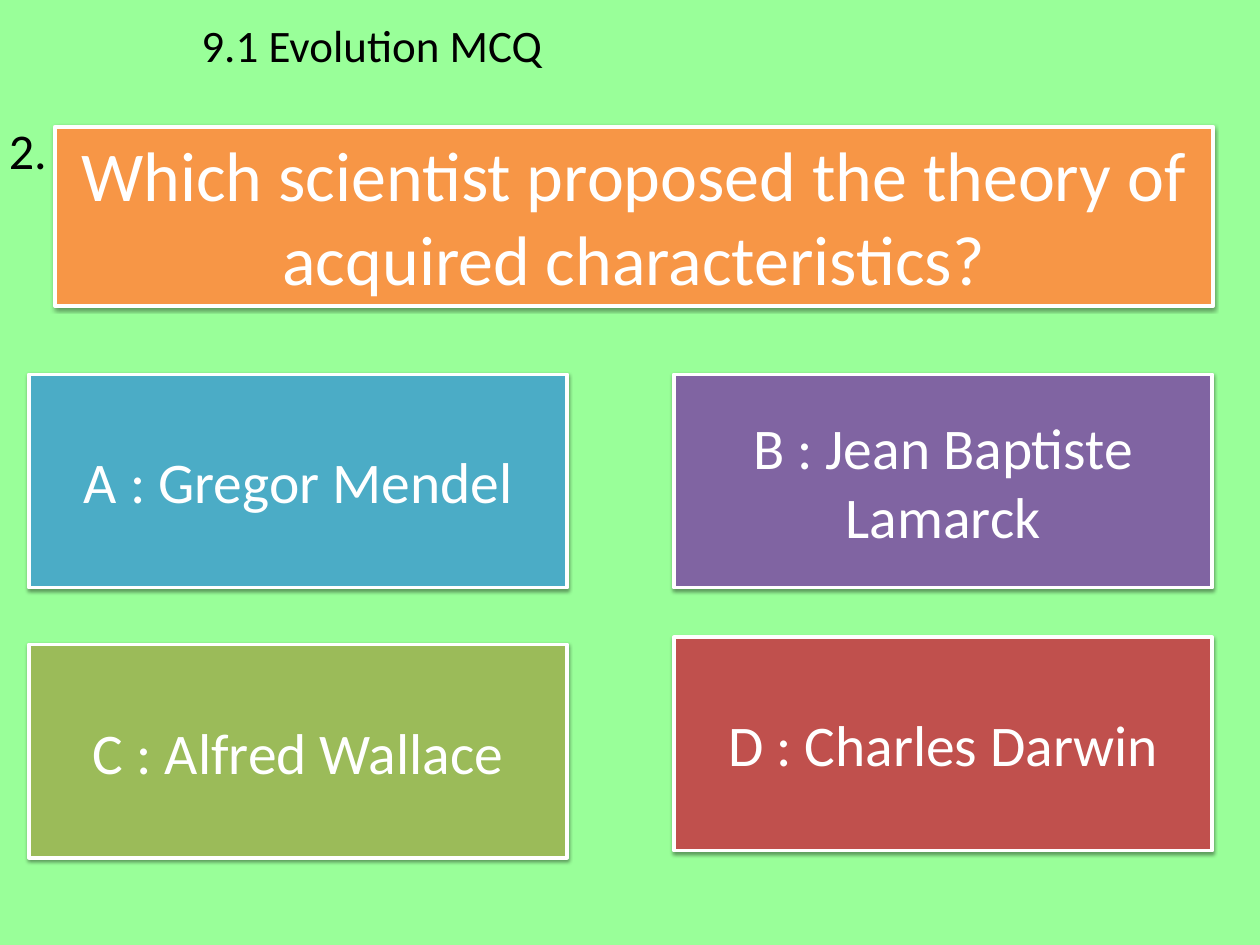
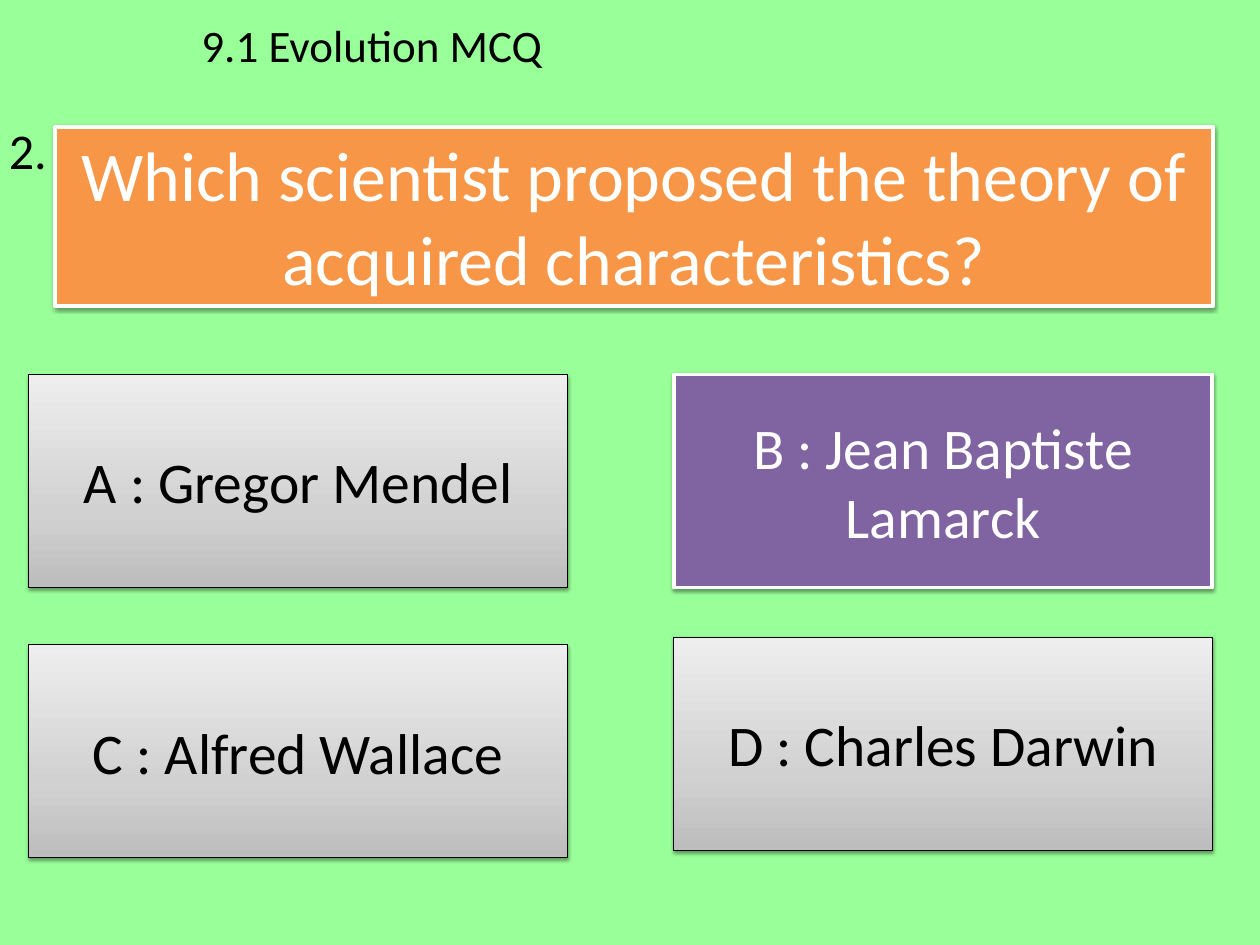
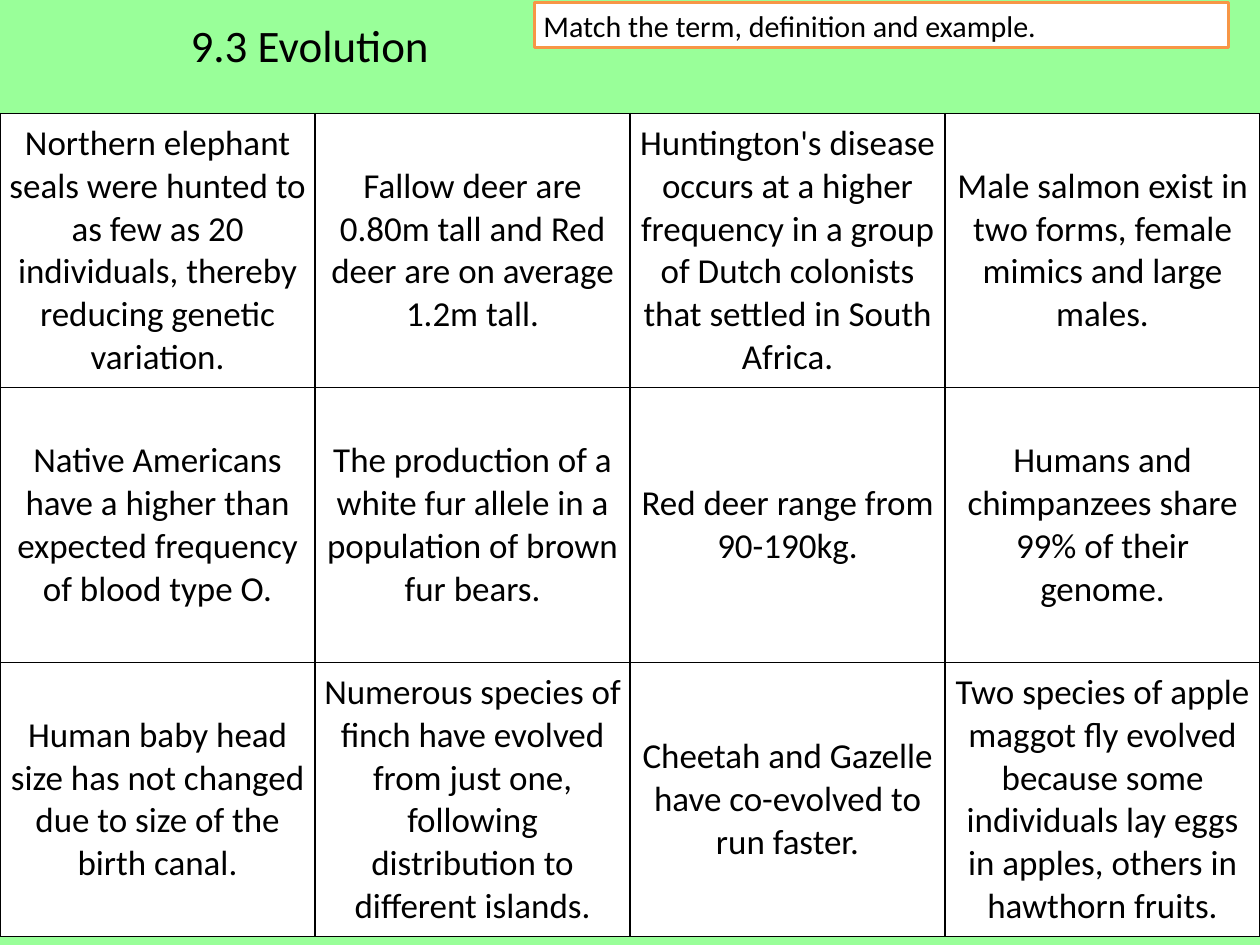
from collections import namedtuple

from lxml.etree import SubElement
from pptx import Presentation
from pptx.dml.color import RGBColor
from pptx.enum.shapes import MSO_SHAPE
from pptx.enum.text import MSO_ANCHOR as Anchor, MSO_AUTO_SIZE as AutoSize, PP_ALIGN as Align
from pptx.oxml import parse_xml
from pptx.oxml.ns import nsdecls, qn
from pptx.util import Inches, Pt

Box = namedtuple("Box", "x y w h")

W, H = 14, 10.5
FONT = "Calibri"
GREEN, ORANGE, WHITE, BLACK = "99FF99", "F79646", "FFFFFF", "000000"
GREYS = [(0, "BDBDBD"), (35, "D1D1D1"), (100, "EEEEEE")]

QUESTION = "Which scientist proposed the theory of acquired characteristics?"
ANSWERS = [
    ("A : Gregor Mendel", "4BACC6"),
    ("B : Jean Baptiste Lamarck", "8064A2"),
    ("C : Alfred Wallace", "9BBB59"),
    ("D : Charles Darwin", "C0504D"),
]
CORRECT = 1
EXAMPLES = [
    ["Northern elephant seals were hunted to as few as 20 individuals, thereby reducing genetic variation.",
     "Fallow deer are 0.80m tall and Red deer are on average 1.2m tall.",
     "Huntington's disease occurs at a higher frequency in a group of Dutch colonists that settled in South Africa.",
     "Male salmon exist in two forms, female mimics and large males."],
    ["Native Americans have a higher than expected frequency of blood type O.",
     "The production of a white fur allele in a population of brown fur bears.",
     "Red deer range from 90-190kg.",
     "Humans and chimpanzees share 99% of their genome."],
    ["Human baby head size has not changed due to size of the birth canal.",
     "Numerous species of finch have evolved from just one, following distribution to different islands.",
     "Cheetah and Gazelle have co-evolved to run faster.",
     "Two species of apple maggot fly evolved because some individuals lay eggs in apples, others in hawthorn fruits."],
]


def rgb(value):
    """Turn a hex string into a colour."""
    return RGBColor.from_string(value)


def inches(box):
    """Turn a box into four lengths."""
    return [Inches(v) for v in box]


def write(tf, text, size, color=BLACK, align=Align.LEFT, anchor=Anchor.TOP):
    """Fill a text frame with one paragraph."""
    tf.word_wrap = True
    tf.vertical_anchor = anchor
    p = tf.paragraphs[0]
    p.text = text
    p.alignment = align
    p.font.name, p.font.size = FONT, Pt(size)
    p.font.color.rgb = rgb(color)


def add_label(slide, box, text, size):
    """Add plain text on the background."""
    tf = slide.shapes.add_textbox(*inches(box)).text_frame
    write(tf, text, size)
    tf.auto_size = AutoSize.SHAPE_TO_FIT_TEXT


def add_panel(slide, box, fill, line, weight):
    """Add a flat outlined rectangle."""
    sp = slide.shapes.add_shape(MSO_SHAPE.RECTANGLE, *inches(box))
    sp.shadow.inherit = False
    sp.fill.solid()
    sp.fill.fore_color.rgb = rgb(fill)
    sp.line.color.rgb = rgb(line)
    sp.line.width = Pt(weight)
    return sp


def add_shadow(sp):
    """Give a panel a soft shadow below it."""
    effects = sp._element.spPr.find(qn("a:effectLst"))
    shadow = SubElement(effects, qn("a:outerShdw"), blurRad=str(Pt(3.1)),
                        dist=str(Pt(1.6)), dir="5400000", rotWithShape="0")
    color = SubElement(shadow, qn("a:srgbClr"), val=BLACK)
    SubElement(color, qn("a:alpha"), val="38000")


def fade_grey(sp):
    """Replace a solid fill by a grey gradient, darkest at the bottom."""
    stops = "".join(f'<a:gs pos="{pos * 1000}"><a:srgbClr val="{c}"/></a:gs>' for pos, c in GREYS)
    grad = parse_xml(f'<a:gradFill {nsdecls("a")} rotWithShape="1"><a:gsLst>{stops}</a:gsLst>'
                     '<a:lin ang="16200000" scaled="0"/></a:gradFill>')
    spPr = sp._element.spPr
    spPr.replace(spPr.find(qn("a:solidFill")), grad)


def add_answer(slide, box, text, fill, muted):
    """Add one answer card, greyed out when muted."""
    line, weight, color = (BLACK, 0.75, BLACK) if muted else (WHITE, 3, WHITE)
    sp = add_panel(slide, box, fill, line, weight)
    if muted:
        fade_grey(sp)
    add_shadow(sp)
    write(sp.text_frame, text, 46, color, Align.CENTER, Anchor.MIDDLE)


def add_answers(slide, box, revealed):
    """Lay the answers out in two columns, the right one spaced tighter."""
    w, h = box.w * 0.455, box.h * 0.441
    bottoms = box.h - h, box.h - h - 0.08
    for i, (text, fill) in enumerate(ANSWERS):
        row, col = divmod(i, 2)
        card = Box(box.x + col * (box.w - w), box.y + row * bottoms[col], w, h)
        add_answer(slide, card, text, fill, revealed and i != CORRECT)


def add_question(slide, box, number, text):
    """Add the question panel and its number."""
    sp = add_panel(slide, box, ORANGE, WHITE, 3)
    add_shadow(sp)
    write(sp.text_frame, text, 56, WHITE, Align.CENTER)
    sp.text_frame.auto_size = AutoSize.SHAPE_TO_FIT_TEXT
    add_label(slide, Box(box.x - 0.61, box.y - 0.13, 0.86, 0.77), number, 40)


def set_borders(cell):
    """Draw thin black lines around a cell."""
    tcPr = cell._tc.get_or_add_tcPr()
    for i, side in enumerate(("lnL", "lnR", "lnT", "lnB")):
        tcPr.insert(i, parse_xml(
            f'<a:{side} {nsdecls("a")} w="{Pt(1)}"><a:solidFill><a:srgbClr val="{BLACK}"/>'
            f'</a:solidFill></a:{side}>'))


def add_examples(slide, box, rows):
    """Add the grid of examples with equal cells."""
    table = slide.shapes.add_table(len(rows), len(rows[0]), *inches(box)).table
    table.first_row = table.horz_banding = False
    for r, texts in enumerate(rows):
        for c, text in enumerate(texts):
            cell = table.cell(r, c)
            cell.fill.solid()
            cell.fill.fore_color.rgb = rgb(WHITE)
            set_borders(cell)
            write(cell.text_frame, text, 28, align=Align.CENTER)
            cell.vertical_anchor = Anchor.MIDDLE


def add_slide(prs):
    """Add a blank slide on the green background."""
    slide = prs.slides.add_slide(prs.slide_layouts[6])
    slide.background.fill.solid()
    slide.background.fill.fore_color.rgb = rgb(GREEN)
    return slide


def quiz_slide(prs, revealed):
    """Build the question slide, with or without its answer revealed."""
    slide = add_slide(prs)
    add_label(slide, Box(2.14, 0.15, 6.92, 0.71), "9.1 Evolution MCQ", 36)
    add_question(slide, Box(0.61, 1.41, 12.87, 1.99), "2.", QUESTION)
    add_answers(slide, Box(0.32, 4.16, 13.15, 5.37), revealed)


def matching_slide(prs):
    """Build the matching exercise."""
    slide = add_slide(prs)
    sp = add_panel(slide, Box(5.94, 0.03, 7.71, 0.5), WHITE, ORANGE, 2.25)
    write(sp.text_frame, "Match the term, definition and example.", 24)
    sp.text_frame.auto_size = AutoSize.SHAPE_TO_FIT_TEXT
    add_label(slide, Box(2.02, 0.15, 4.86, 0.71), "9.3 Evolution", 36)
    add_examples(slide, Box(0, 1.26, W, 9.15), EXAMPLES)


def main():
    """Build and save the presentation."""
    prs = Presentation()
    prs.slide_width, prs.slide_height = Inches(W), Inches(H)
    for revealed in (False, True):
        quiz_slide(prs, revealed)
    matching_slide(prs)
    prs.save("out.pptx")


if __name__ == "__main__":
    main()
